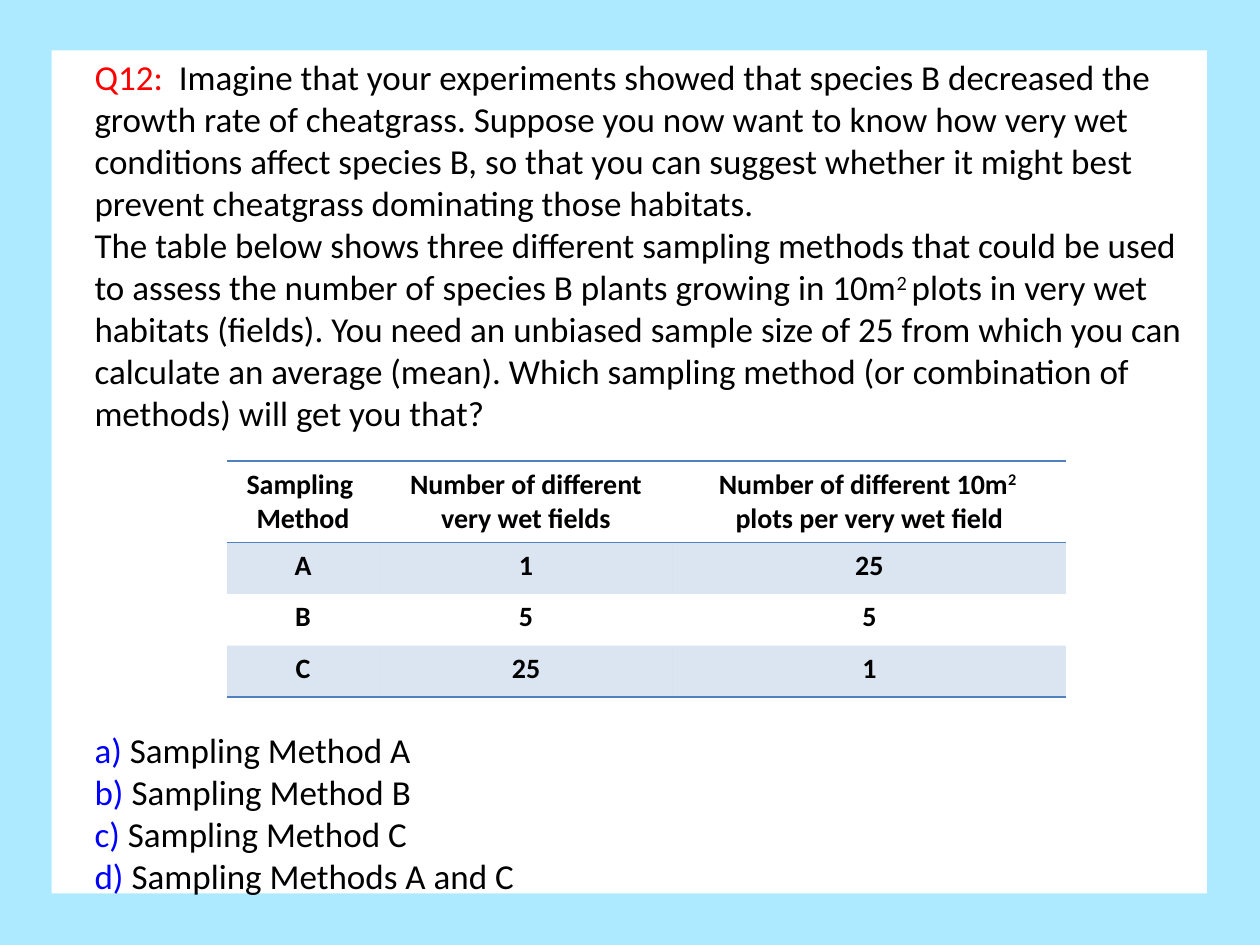
from dataclasses import dataclass

from lxml.etree import SubElement
from pptx import Presentation
from pptx.dml.color import RGBColor
from pptx.enum.shapes import MSO_SHAPE
from pptx.enum.text import MSO_ANCHOR, MSO_AUTO_SIZE, PP_ALIGN
from pptx.oxml import parse_xml
from pptx.oxml.ns import nsdecls, qn
from pptx.util import Inches, Pt

SKY, WHITE, BLACK = "ADEAFF", "FFFFFF", "000000"
RED, BLUE, STEEL = "FF0000", "0000FF", "4F81BD"
NO_STYLE = "{2D5ABB26-0587-4C30-8999-92F81FD0307C}"


@dataclass
class Span:
    text: str
    color: str = BLACK
    superscript: bool = False


@dataclass
class Row:
    cells: list  # each cell is a list of paragraphs, each paragraph a list of spans
    height: float = 0.41
    shaded: bool = False
    borders: tuple = ()


QUESTION = [
    [Span("Q12:  ", RED),
     Span("Imagine that your experiments showed that species B decreased the growth rate of "
          "cheatgrass. Suppose you now want to know how very wet conditions affect species B, so "
          "that you can suggest whether it might best prevent cheatgrass dominating those habitats.")],
    [Span("The table below shows three different sampling methods that could be used to assess the "
          "number of species B plants growing in 10m"),
     Span("2 ", superscript=True),
     Span("plots in very wet habitats (fields). You need an unbiased sample size of 25 from which "
          "you can calculate an average (mean). Which sampling method (or combination of methods) "
          "will get you that?")],
]
ANSWERS = [[Span(f"{letter}) ", BLUE), Span(f"Sampling {choice}")]
           for letter, choice in zip("abcd", ("Method A", "Method B", "Method C", "Methods A and C"))]

HEADER = Row([
    [[Span("Sampling ")], [Span("Method")]],
    [[Span("Number of different very wet fields")]],
    [[Span("Number of different 10m"), Span("2 ", superscript=True)],
     [Span("plots per very wet field")]],
], height=0.63, borders=("lnT", "lnB"))


def data_row(*values: str, **options) -> Row:
    return Row([[[Span(v)]] for v in values], **options)


ROWS = [
    HEADER,
    data_row("A", "1", "25", shaded=True),
    data_row("B", "5", "5"),
    data_row("C", "25", "1", shaded=True, borders=("lnB",)),
]
COLUMN_WIDTHS = (1.21, 2.33, 3.12)


def paint(fill, color: str) -> None:
    fill.solid()
    fill.fore_color.rgb = RGBColor.from_string(color)


def write(tf, paragraphs: list, size: int, bold: bool, align) -> None:
    """Fill a text frame with paragraphs of formatted spans."""
    for i, spans in enumerate(paragraphs):
        p = tf.paragraphs[0] if i == 0 else tf.add_paragraph()
        p.alignment = align
        p.space_before = Pt(0)
        for span in spans:
            r = p.add_run()
            r.text = span.text
            r.font.name = "Calibri"
            r.font.size = Pt(size)
            r.font.bold = bold
            r.font.color.rgb = RGBColor.from_string(span.color)
            if span.superscript:
                r.font._element.set("baseline", "30000")


def fill_placeholder(sp, top: float, height: float, paragraphs: list) -> None:
    sp.left, sp.top, sp.width, sp.height = (Inches(v) for v in (0.65, top, 8.94, height))
    tf = sp.text_frame
    tf.word_wrap = True
    tf.auto_size = MSO_AUTO_SIZE.NONE
    tf.vertical_anchor = MSO_ANCHOR.TOP
    write(tf, paragraphs, 20, False, PP_ALIGN.LEFT)
    for p in tf.paragraphs:
        pPr = p._p.get_or_add_pPr()
        pPr.set("marL", "0")
        pPr.set("indent", "0")
        SubElement(pPr, qn("a:buNone"))


def format_cell(cell, row: Row) -> None:
    """Apply the translucent band and the horizontal rules of a row."""
    if row.shaded:
        paint(cell.fill, STEEL)
    else:
        cell.fill.background()
    tcPr = cell._tc.get_or_add_tcPr()
    for color in tcPr.iter(qn("a:srgbClr")):
        SubElement(color, qn("a:alpha"), val="20000")
    for i, side in enumerate(row.borders):
        tcPr.insert(i, parse_xml(
            f'<a:{side} {nsdecls("a")} w="{Pt(1)}"><a:solidFill>'
            f'<a:srgbClr val="{STEEL}"/></a:solidFill></a:{side}>'))


def add_sampling_table(s) -> None:
    height = sum(row.height for row in ROWS)
    frame = s.shapes.add_table(len(ROWS), len(COLUMN_WIDTHS), Inches(1.8), Inches(3.66),
                               Inches(sum(COLUMN_WIDTHS)), Inches(height))
    table = frame.table
    table._tbl.tblPr.find(qn("a:tableStyleId")).text = NO_STYLE
    for column, width in zip(table.columns, COLUMN_WIDTHS):
        column.width = Inches(width)
    for table_row, row in zip(table.rows, ROWS):
        table_row.height = Inches(row.height)
        for cell, paragraphs in zip(table_row.cells, row.cells):
            write(cell.text_frame, paragraphs, 16, True, PP_ALIGN.CENTER)
            format_cell(cell, row)


def add_panel(s) -> None:
    """Place the white panel behind everything else."""
    sp = s.shapes.add_shape(MSO_SHAPE.RECTANGLE, Inches(0.41), Inches(0.4),
                            Inches(9.17), Inches(6.69))
    sp.shadow.inherit = False
    paint(sp.fill, WHITE)
    sp.line.fill.background()
    s.shapes._spTree.insert(2, sp._element)


def main() -> None:
    prs = Presentation()
    prs.slide_width, prs.slide_height = Inches(10), Inches(7.5)
    s = prs.slides.add_slide(prs.slide_layouts[1])
    paint(s.background.fill, SKY)
    add_panel(s)
    fill_placeholder(s.shapes.title, 0.39, 3.15, QUESTION)
    fill_placeholder(s.placeholders[1], 5.73, 1.45, ANSWERS)
    add_sampling_table(s)
    prs.save("out.pptx")


if __name__ == "__main__":
    main()
